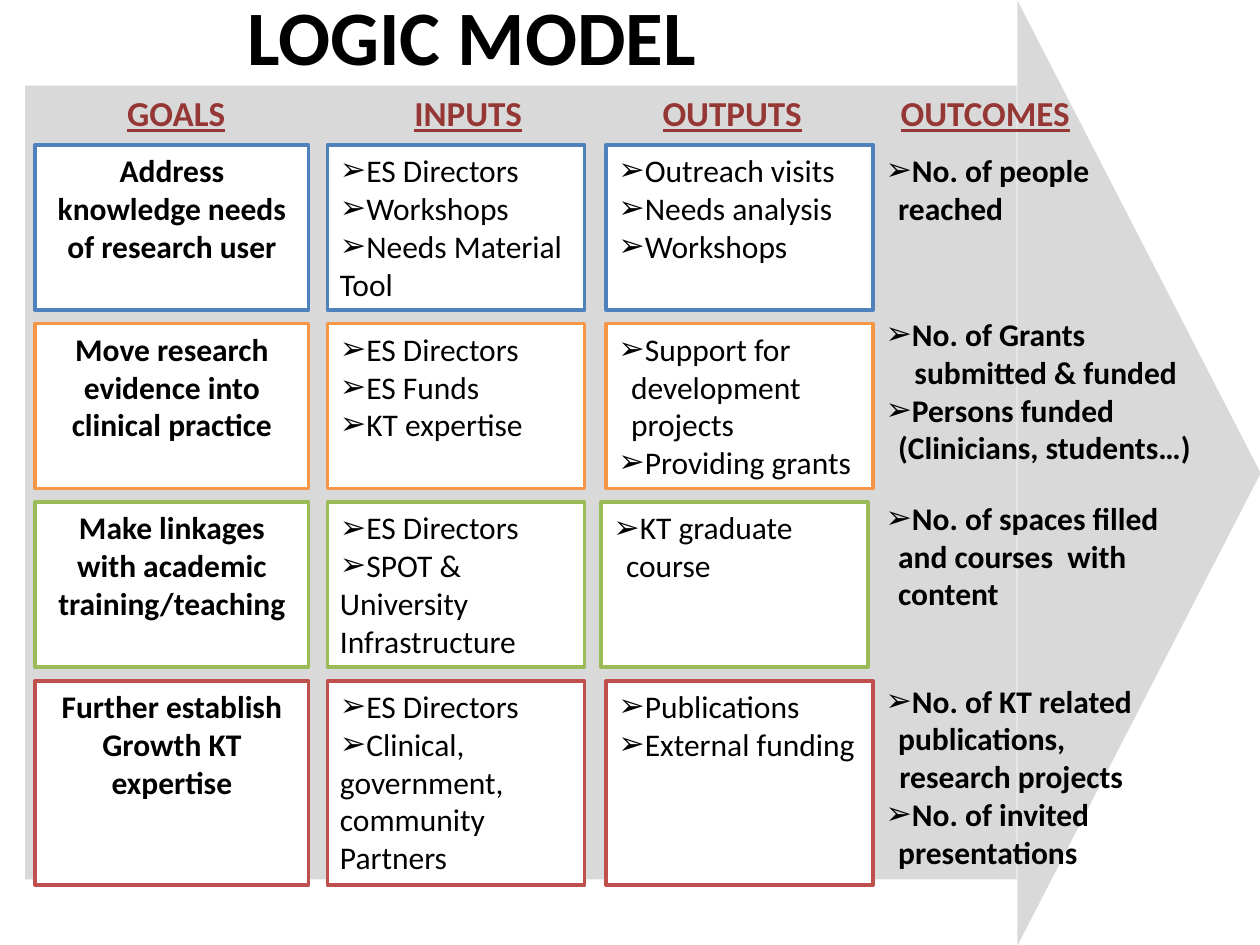
from lxml import etree
from pptx import Presentation
from pptx.dml.color import RGBColor
from pptx.enum.shapes import MSO_SHAPE
from pptx.enum.text import MSO_ANCHOR, PP_ALIGN
from pptx.oxml import parse_xml
from pptx.util import Inches, Pt

RECT, TRI = MSO_SHAPE.RECTANGLE, MSO_SHAPE.ISOSCELES_TRIANGLE
LEFT, MID, TOP = PP_ALIGN.LEFT, PP_ALIGN.CENTER, MSO_ANCHOR.TOP
NS = "http://schemas.openxmlformats.org/drawingml/2006/main"
HEX = {"arrow": "D9D9D9", "head": "953735", "text": "000000", "box": "FFFFFF",
       "blue": "4F81BD", "orange": "F79646", "green": "9BBB59", "red": "C0504D"}
RGB = {key: RGBColor.from_string(val) for key, val in HEX.items()}
SHADOW = (f'<a:effectLst xmlns:a="{NS}"><a:outerShdw blurRad="38100" dist="38100" '
          'dir="2700000" algn="tl"><a:srgbClr val="000000"><a:alpha val="43000"/>'
          '</a:srgbClr></a:outerShdw></a:effectLst>')

deck = Presentation()
deck.slide_width, deck.slide_height = Inches(10), Inches(7.5)
slide = deck.slides.add_slide(deck.slide_layouts[6])


def draw(kind, at, fill, line=None):
    """Add a flat shape, with an outline if a line colour is named."""
    shape = slide.shapes.add_shape(kind, *map(Inches, at))
    shape.shadow.inherit = False
    shape.fill.solid()
    shape.fill.fore_color.rgb = RGB[fill]
    if line:
        shape.line.color.rgb = RGB[line]
        shape.line.width = Pt(2)
    else:
        shape.line.fill.background()
    return shape


def write(shape, lines, align=LEFT, mark=False, hang=0, glow=False, tint="text", **look):
    """Fill a shape with paragraphs; a (text, indent) pair has no bullet."""
    frame = shape.text_frame
    frame.word_wrap, frame.vertical_anchor = True, TOP
    for i, line in enumerate(lines):
        para = frame.paragraphs[0] if i == 0 else frame.add_paragraph()
        para.alignment = align
        plain = isinstance(line, tuple)
        text, inset = line if plain else (line, hang)
        props = para._p.get_or_add_pPr()
        props.set("marL", str(Inches(inset)))
        props.set("indent", str(0 if plain else -Inches(inset)))
        if mark and not plain:
            etree.SubElement(props, f"{{{NS}}}buFont", typeface="Wingdings")
            etree.SubElement(props, f"{{{NS}}}buChar", char="➢")
            props[0].set("typeface", "Calibri")
        run = para.add_run()
        run.text = text
        run.font.color.rgb = RGB[tint]
        for key, val in {"name": "Calibri", "size": Pt(18), **look}.items():
            setattr(run.font, key, val)
        if glow:
            run._r.rPr.insert(1, parse_xml(SHADOW))


# Big arrow: body and head
draw(RECT, (0.2, 0.68, 7.87, 6.3), "arrow")
draw(TRI, (5.29, 2.79, 7.5, 1.93), "arrow").rotation = 90

# Columns: left, width, text format
cols = [
    (0.28, 2.17, {"align": MID, "bold": True}),
    (2.6, 2.04, {"mark": True}),
    (4.81, 2.12, {"mark": True, "hang": 0.1}),
]
# Rows: colour, height, the three boxes, outcome top and width, outcomes
rows = [
    ("blue", 1.31,
     [["Address knowledge needs of research user"],
      ["ES Directors", "Workshops", "Needs Material Tool"],
      ["Outreach visits", "Needs analysis", "Workshops"]],
     1.15, 2.12, ["No. of people reached"]),
    ("orange", 1.31,
     [["Move research evidence into clinical practice"],
      ["ES Directors", "ES Funds", "KT expertise"],
      ["Support for development projects", "Providing grants"]],
     2.45, 3.07, ["No. of Grants", ("submitted & funded", 0.23),
                  "Persons funded (Clinicians, students…)"]),
    ("green", 1.31,
     [["Make linkages with academic training/teaching"],
      ["ES Directors", "SPOT & University Infrastructure"],
      ["KT graduate course"]],
     3.91, 2.45, ["No. of spaces filled and courses  with content"]),
    ("red", 1.62,
     [["Further establish Growth KT expertise"],
      ["ES Directors", "Clinical, government, community Partners"],
      ["Publications", "External funding"]],
     5.36, 2.82, ["No. of KT related publications,", ("research projects", 0.11),
                  "No. of invited presentations"]),
]
for i, (tone, high, cells, top, wide, ends) in enumerate(rows):
    for j, ((x, w, form), lines) in enumerate(zip(cols, cells)):
        nudge = 0.04 if (tone, j) == ("green", 2) else 0
        box = draw(RECT, (x - nudge, 1.15 + 1.418 * i, w, high), "box", tone)
        write(box, lines, **form)
    note = slide.shapes.add_textbox(*map(Inches, (6.93, top, wide, high)))
    write(note, ends, mark=True, hang=0.1, glow=True, bold=True)

# Column heads and title
heads = [("GOALS", 0.91, 1.42), ("INPUTS", 3.19, 1.1),
         ("OUTPUTS", 5.16, 1.42), ("OUTCOMES", 7.05, 1.73)]
for text, x, w in heads:
    head = slide.shapes.add_textbox(*map(Inches, (x, 0.68, w, 0.77)))
    write(head, [text], tint="head", size=Pt(20), bold=True, underline=True)
title = slide.shapes.add_textbox(*map(Inches, (0.91, -0.14, 5.67, 0.84)))
write(title, ["LOGIC MODEL"], align=MID, size=Pt(44), bold=True)

deck.save("out.pptx")
